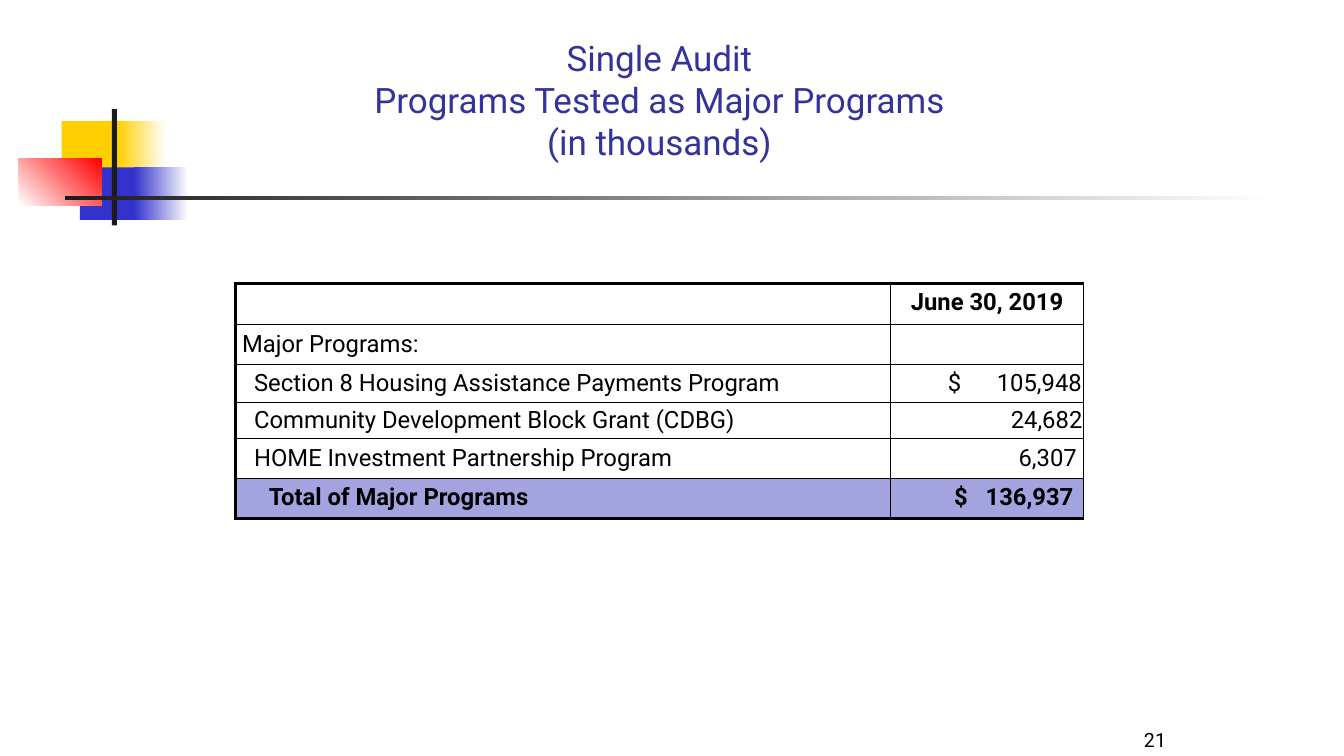
import dataclasses
import typing

import pptx
import pptx.dml.color
import pptx.enum.shapes
import pptx.enum.text
import pptx.oxml
import pptx.oxml.ns
import pptx.util

Pt = pptx.util.Pt
ALIGN = pptx.enum.text.PP_ALIGN
ANCHOR = pptx.enum.text.MSO_ANCHOR


@dataclasses.dataclass(frozen=True)
class Theme:
    font: str = "Roboto"
    title: str = "333399"
    text: str = "000000"
    yellow: str = "FFCF01"
    blue: str = "3333CC"
    red: str = "FF0000"
    dark: str = "1C1C1C"
    white: str = "FFFFFF"
    total_fill: str = "A3A3E0"
    title_size: float = 25
    table_size: float = 17
    number_size: float = 14
    thick: float = 2.25
    thin: float = 1


THEME = Theme()


@dataclasses.dataclass(frozen=True)
class Block:
    box: tuple[float, float, float, float]
    start: str
    end: typing.Optional[str] = None
    angle: float = 0


@dataclasses.dataclass(frozen=True)
class Entry:
    text: str = ""
    align: typing.Any = ALIGN.LEFT
    left: float = 1
    right: float = 1
    tab: float = 0


@dataclasses.dataclass(frozen=True)
class Row:
    height: float
    label: Entry
    amount: Entry
    strong: bool = False
    fill: typing.Optional[str] = None


# Corner ornament and rule, from back to front
BLOCKS = [
    Block((44, 86.5, 46, 37.5), THEME.yellow),
    Block((84, 86.5, 34.5, 37.5), THEME.yellow, THEME.white),
    Block((57, 119.5, 44, 37.5), THEME.blue),
    Block((96, 119.5, 38.5, 37.5), THEME.blue, THEME.white),
    Block((13.5, 113.5, 59, 33.5), THEME.white, THEME.red, 45),
    Block((80, 78, 3.5, 83), THEME.dark),
    Block((46.5, 140.2, 863.5, 2.5), THEME.dark, THEME.white),
]

COLUMNS = [468, 138.2]
ROWS = [
    Row(29.3, Entry(), Entry("June 30, 2019", ALIGN.CENTER, 7.2, 7.2), strong=True),
    Row(28.8, Entry("Major Programs:", left=5), Entry()),
    Row(26.9, Entry("Section 8 Housing Assistance Payments Program", left=13.5),
        Entry("$\t105,948", left=41, tab=35)),
    Row(25.8, Entry("Community Development Block Grant (CDBG)", left=13.5),
        Entry("24,682", ALIGN.RIGHT)),
    Row(28.7, Entry("HOME Investment Partnership Program", left=13.5),
        Entry("6,307", ALIGN.RIGHT, right=5)),
    Row(28.7, Entry("Total of Major Programs", left=24),
        Entry("$\t136,937", left=45.5, tab=22.5), strong=True, fill=THEME.total_fill),
]


def rgb(color: str) -> pptx.dml.color.RGBColor:
    return pptx.dml.color.RGBColor.from_string(color)


def apply(target: typing.Any, values: dict[str, typing.Any]) -> None:
    for name, value in values.items():
        setattr(target, name, value)


def style_runs(p: typing.Any, size: float, color: str, bold: bool = False) -> None:
    for r in p.runs:
        apply(r.font, {"name": THEME.font, "size": Pt(size), "bold": bold})
        r.font.color.rgb = rgb(color)


def draw_block(slide: typing.Any, block: Block) -> None:
    sp = slide.shapes.add_shape(pptx.enum.shapes.MSO_SHAPE.RECTANGLE, *map(Pt, block.box))
    sp.shadow.inherit = False
    sp.line.fill.background()
    if block.end is None:
        sp.fill.solid()
        sp.fill.fore_color.rgb = rgb(block.start)
        return
    sp.fill.gradient()
    sp.fill.gradient_angle = block.angle
    for stop, color in zip(sp.fill.gradient_stops, (block.start, block.end)):
        stop.color.rgb = rgb(color)


def draw_text(slide: typing.Any, box: tuple[float, float, float, float], text: str,
              align: typing.Any, size: float, color: str) -> None:
    tf = slide.shapes.add_textbox(*map(Pt, box)).text_frame
    apply(tf, {"word_wrap": True, "vertical_anchor": ANCHOR.BOTTOM})
    p = tf.paragraphs[0]
    apply(p, {"text": text, "alignment": align})
    style_runs(p, size, color)


def set_borders(cell: typing.Any, widths: dict[str, float]) -> None:
    tc_pr = cell._tc.get_or_add_tcPr()
    for index, (side, width) in enumerate(widths.items()):
        tc_pr.insert(index, pptx.oxml.parse_xml(
            f'<a:ln{side} {pptx.oxml.ns.nsdecls("a")} w="{int(Pt(width))}">'
            f'<a:solidFill><a:srgbClr val="{THEME.text}"/></a:solidFill></a:ln{side}>'))


def add_tab(p: typing.Any, position: float) -> None:
    p._p.get_or_add_pPr().append(pptx.oxml.parse_xml(
        f'<a:tabLst {pptx.oxml.ns.nsdecls("a")}>'
        f'<a:tab pos="{int(Pt(position))}" algn="l"/></a:tabLst>'))


def fill_cell(cell: typing.Any, entry: Entry, row: Row) -> None:
    inset = 3.6 if row.strong else 0.5
    apply(cell, {
        "margin_left": Pt(entry.left), "margin_right": Pt(entry.right),
        "margin_top": Pt(inset), "margin_bottom": Pt(inset),
        "vertical_anchor": ANCHOR.TOP if row.strong else ANCHOR.MIDDLE,
    })
    if row.fill:
        cell.fill.solid()
        cell.fill.fore_color.rgb = rgb(row.fill)
    else:
        cell.fill.background()
    if not entry.text:
        return
    p = cell.text_frame.paragraphs[0]
    apply(p, {"text": entry.text, "alignment": entry.align})
    if row.strong:
        p.space_before = Pt(0.2 * THEME.table_size)
    if entry.tab:
        add_tab(p, entry.tab)
    style_runs(p, THEME.table_size, THEME.text, row.strong)


def draw_table(slide: typing.Any, left: float, top: float) -> None:
    height = sum(row.height for row in ROWS)
    table = slide.shapes.add_table(len(ROWS), len(COLUMNS), Pt(left), Pt(top),
                                   Pt(sum(COLUMNS)), Pt(height)).table
    apply(table, {"first_row": False, "horz_banding": False})
    for column, width in zip(table.columns, COLUMNS):
        column.width = Pt(width)
    for i, row in enumerate(ROWS):
        table.rows[i].height = Pt(row.height)
        for j, entry in enumerate((row.label, row.amount)):
            cell = table.cell(i, j)
            fill_cell(cell, entry, row)
            set_borders(cell, {
                "L": THEME.thick if j == 0 else THEME.thin,
                "R": THEME.thin,
                "T": THEME.thick if i == 0 else THEME.thin,
                "B": THEME.thick if i == len(ROWS) - 1 else THEME.thin,
            })


def main() -> None:
    prs = pptx.Presentation()
    apply(prs, {"slide_width": Pt(960), "slide_height": Pt(540)})
    slide = prs.slides.add_slide(prs.slide_layouts[6])

    # Ornament
    for block in BLOCKS:
        draw_block(slide, block)

    # Title, programs table and page number
    draw_text(slide, (168, 16.5, 606, 103),
              "Single Audit\vPrograms Tested as Major Programs\v(in thousands)",
              ALIGN.CENTER, THEME.title_size, THEME.title)
    draw_table(slide, 168, 202.3)
    draw_text(slide, (690, 504, 150, 36), "21", ALIGN.RIGHT, THEME.number_size, THEME.text)

    prs.save("out.pptx")


if __name__ == "__main__":
    main()
